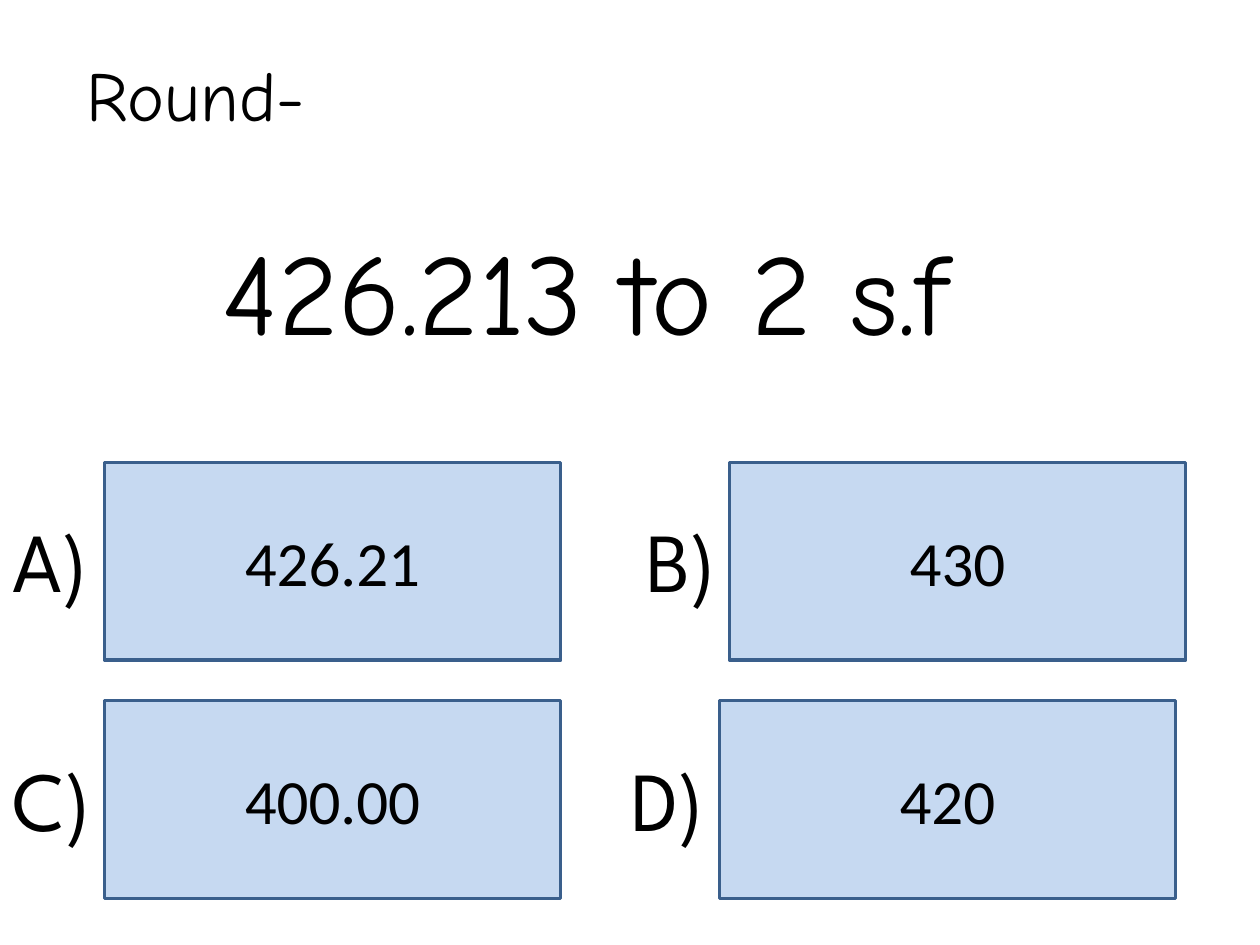
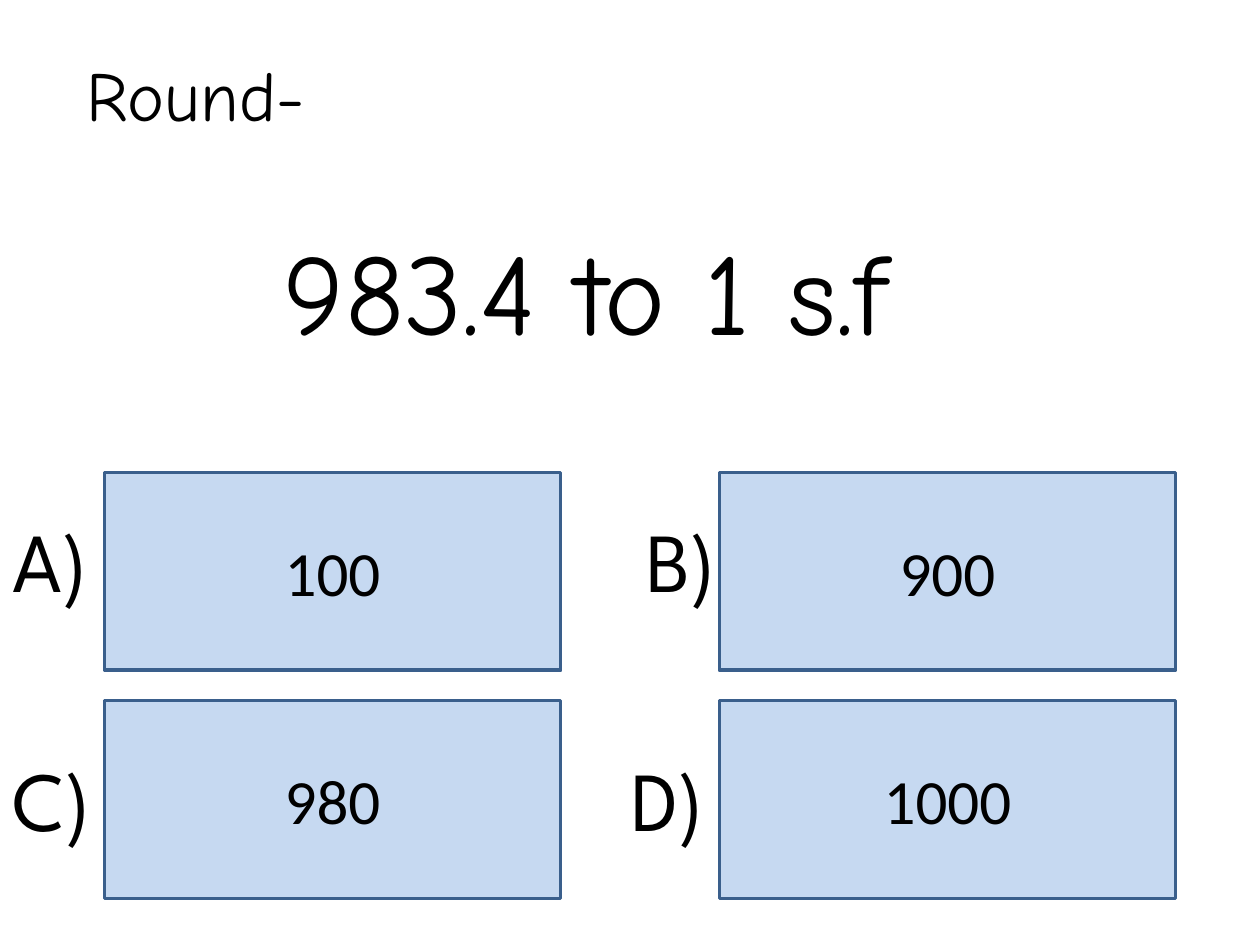
from pptx import Presentation
from pptx import util as u
from pptx.dml.color import RGBColor
from pptx.enum import shapes, text

BLACK, BOX_FILL, BOX_LINE = "000000", "C6D9F1", "3A5F8C"
TITLE_FONT, LABEL_FONT, ANSWER_FONT = "Comic Neue", "League Spartan", "Calibri"
BOX_WIDTH, BOX_HEIGHT = 3.62, 1.57
LEFT_COLUMN, RIGHT_COLUMN, BOTTOM_ROW = 0.83, 5.71, 5.56

# Answer labels: text, left, top, width
LABELS = [("A)", 0, 3.99, 0.95), ("B)", 5.03, 3.99, 0.84),
          ("C)", 0, 5.88, 1), ("D)", 4.91, 5.88, 0.95)]

# Questions: wording, answers A to D, top of the first row, left of box B
QUESTIONS = [
    ("426.213 to 2 s.f", ["426.21", "430", "400.00", "420"], 3.67, 5.79),
    ("983.4 to 1 s.f", ["100", "900", "980", "1000"], 3.75, RIGHT_COLUMN),
]


def color(hex_string):
    return RGBColor.from_string(hex_string)


def add_run(paragraph, words, font, size):
    run = paragraph.add_run()
    run.text = words
    run.font.name = font
    run.font.size = u.Pt(size)
    run.font.color.rgb = color(BLACK)


presentation = Presentation()
presentation.slide_width = u.Inches(10)
presentation.slide_height = u.Inches(7.5)
title_only = presentation.slide_layouts[5]

for question, answers, top_row, b_left in QUESTIONS:
    slide = presentation.slides.add_slide(title_only)

    # Title with the question below it
    title = slide.shapes.title
    title.left, title.top = u.Inches(0.59), u.Inches(0.36)
    title.width, title.height = u.Inches(8.11), u.Inches(2.56)
    frame = title.text_frame
    frame.word_wrap = True
    frame.auto_size = text.MSO_AUTO_SIZE.SHAPE_TO_FIT_TEXT
    frame.vertical_anchor = text.MSO_ANCHOR.TOP
    paragraph = frame.paragraphs[0]
    paragraph.alignment = text.PP_ALIGN.LEFT
    add_run(paragraph, "Round-", TITLE_FONT, 40)
    paragraph = frame.add_paragraph()
    paragraph.alignment = text.PP_ALIGN.CENTER
    paragraph.space_before = u.Pt(48)
    add_run(paragraph, question, TITLE_FONT, 66)

    # Answer boxes, A to D
    corners = [(LEFT_COLUMN, top_row), (b_left, top_row),
               (LEFT_COLUMN, BOTTOM_ROW), (RIGHT_COLUMN, BOTTOM_ROW)]
    for answer, (left, top) in zip(answers, corners):
        box = slide.shapes.add_shape(
            shapes.MSO_SHAPE.RECTANGLE, u.Inches(left), u.Inches(top),
            u.Inches(BOX_WIDTH), u.Inches(BOX_HEIGHT))
        box.shadow.inherit = False
        box.fill.solid()
        box.fill.fore_color.rgb = color(BOX_FILL)
        box.line.color.rgb = color(BOX_LINE)
        box.line.width = u.Pt(2)
        box.text_frame.vertical_anchor = text.MSO_ANCHOR.MIDDLE
        paragraph = box.text_frame.paragraphs[0]
        paragraph.alignment = text.PP_ALIGN.CENTER
        add_run(paragraph, answer, ANSWER_FONT, 36)

    # Letters beside the boxes
    for letter, left, top, width in LABELS:
        label = slide.shapes.add_textbox(
            u.Inches(left), u.Inches(top), u.Inches(width), u.Inches(0.91))
        label.text_frame.word_wrap = False
        label.text_frame.auto_size = text.MSO_AUTO_SIZE.SHAPE_TO_FIT_TEXT
        add_run(label.text_frame.paragraphs[0], letter, LABEL_FONT, 48)

presentation.save("out.pptx")
